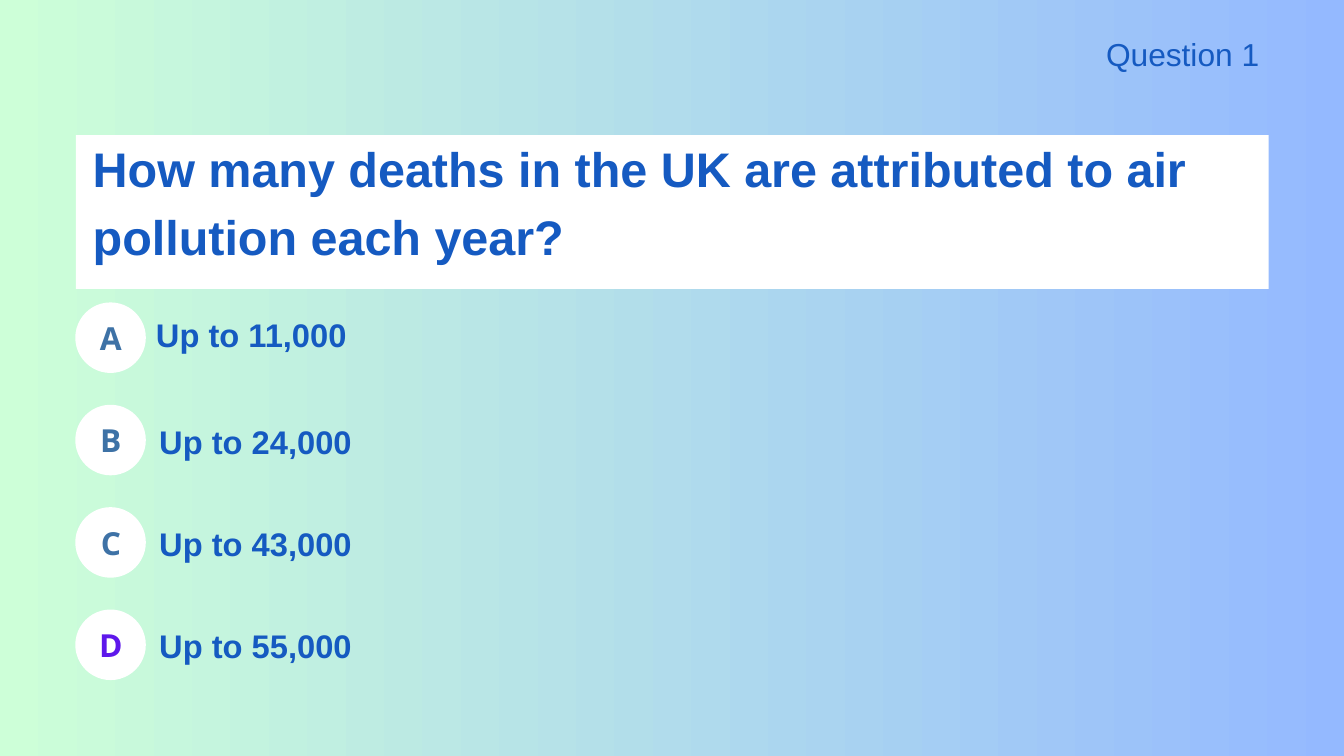
from dataclasses import dataclass

from pptx import Presentation, util as u
from pptx.dml.color import RGBColor
from pptx.enum import shapes, text

WIDTH, HEIGHT = 20, 11.25
BLUE, STEEL, VIOLET, WHITE = "155AC1", "3E72A6", "5E17EB", "FFFFFF"

# Answer grid: one row per option, badge column then text column
LEFT, BADGE = 1.12, 1.05
FIRST_ROW, LAST_ROW = 4.5, 9.07


@dataclass
class Option:
    letter: str
    answer: str
    color: str = STEEL
    dx: float = 1.25  # answer offset from the badge
    dy: float = 0.15


OPTIONS = [
    Option("A", "Up to 11,000", dx=1.2, dy=0.09),
    Option("B", "Up to 24,000"),
    Option("C", "Up to 43,000"),
    Option("D", "Up to 55,000", VIOLET),
]
ROW_PITCH = (LAST_ROW - FIRST_ROW) / (len(OPTIONS) - 1)


def rgb(color: str) -> RGBColor:
    return RGBColor.from_string(color)


def add_panel(s, kind, x: float, y: float, w: float, h: float):
    """Add a plain white shape without outline or shadow."""
    sp = s.shapes.add_shape(kind, *map(u.Inches, (x, y, w, h)))
    sp.shadow.inherit = False
    sp.fill.solid()
    sp.fill.fore_color.rgb = rgb(WHITE)
    sp.line.fill.background()
    return sp


def add_text(s, words: str, x: float, y: float, w: float, h: float, *,
             size: float, spacing: float, color: str = BLUE,
             font: str = "Arial", bold: bool = True,
             align=text.PP_ALIGN.LEFT, anchor=text.MSO_ANCHOR.TOP,
             inset: float = 0, grow: bool = True):
    sp = s.shapes.add_textbox(*map(u.Inches, (x, y, w, h)))
    tf = sp.text_frame
    tf.word_wrap = True
    tf.auto_size = (text.MSO_AUTO_SIZE.SHAPE_TO_FIT_TEXT if grow
                    else text.MSO_AUTO_SIZE.NONE)
    tf.vertical_anchor = anchor
    tf.margin_left = tf.margin_right = u.Inches(inset)
    tf.margin_top = tf.margin_bottom = u.Inches(inset)
    p = tf.paragraphs[0]
    p.alignment = align
    p.line_spacing = u.Pt(spacing)
    r = p.add_run()
    r.text = words
    r.font.name, r.font.size, r.font.bold = font, u.Pt(size), bold
    r.font.color.rgb = rgb(color)
    return sp


def add_option(s, row: int, option: Option) -> None:
    y = FIRST_ROW + row * ROW_PITCH
    add_panel(s, shapes.MSO_SHAPE.OVAL, LEFT, y, BADGE, BADGE)
    add_text(s, option.letter, LEFT + 0.1, y + 0.01, 0.86, 0.94,
             size=34, spacing=47.6, color=option.color, font="Open Sans",
             align=text.PP_ALIGN.CENTER, anchor=text.MSO_ANCHOR.MIDDLE,
             inset=0.06, grow=False)
    x = LEFT + option.dx
    add_text(s, option.answer, x, y + option.dy, WIDTH - x, 0.73,
             size=35, spacing=49)


def main() -> None:
    prs = Presentation()
    prs.slide_width, prs.slide_height = u.Inches(WIDTH), u.Inches(HEIGHT)
    s = prs.slides.add_slide(prs.slide_layouts[6])

    # Background: green to blue, left to right
    fill = s.background.fill
    fill.gradient()
    fill.gradient_angle = 0
    for stop, position, color in zip(fill.gradient_stops, (0, 1),
                                     ("CDFFD8", "94B9FF")):
        stop.position = position
        stop.color.rgb = rgb(color)

    # Question
    add_panel(s, shapes.MSO_SHAPE.RECTANGLE, 1.13, 2.01, 17.75, 2.29)
    add_text(s, "Question 1", 11.58, 0.43, 7.16, 0.71, size=34,
             spacing=47.6, bold=False, align=text.PP_ALIGN.RIGHT)
    add_text(s, "How many deaths in the UK are attributed to air pollution "
             "each year?", 1.38, 1.92, 17.36, 2.1, size=52, spacing=72.8)

    # Answers
    for row, option in enumerate(OPTIONS):
        add_option(s, row, option)

    prs.save("out.pptx")


if __name__ == "__main__":
    main()
